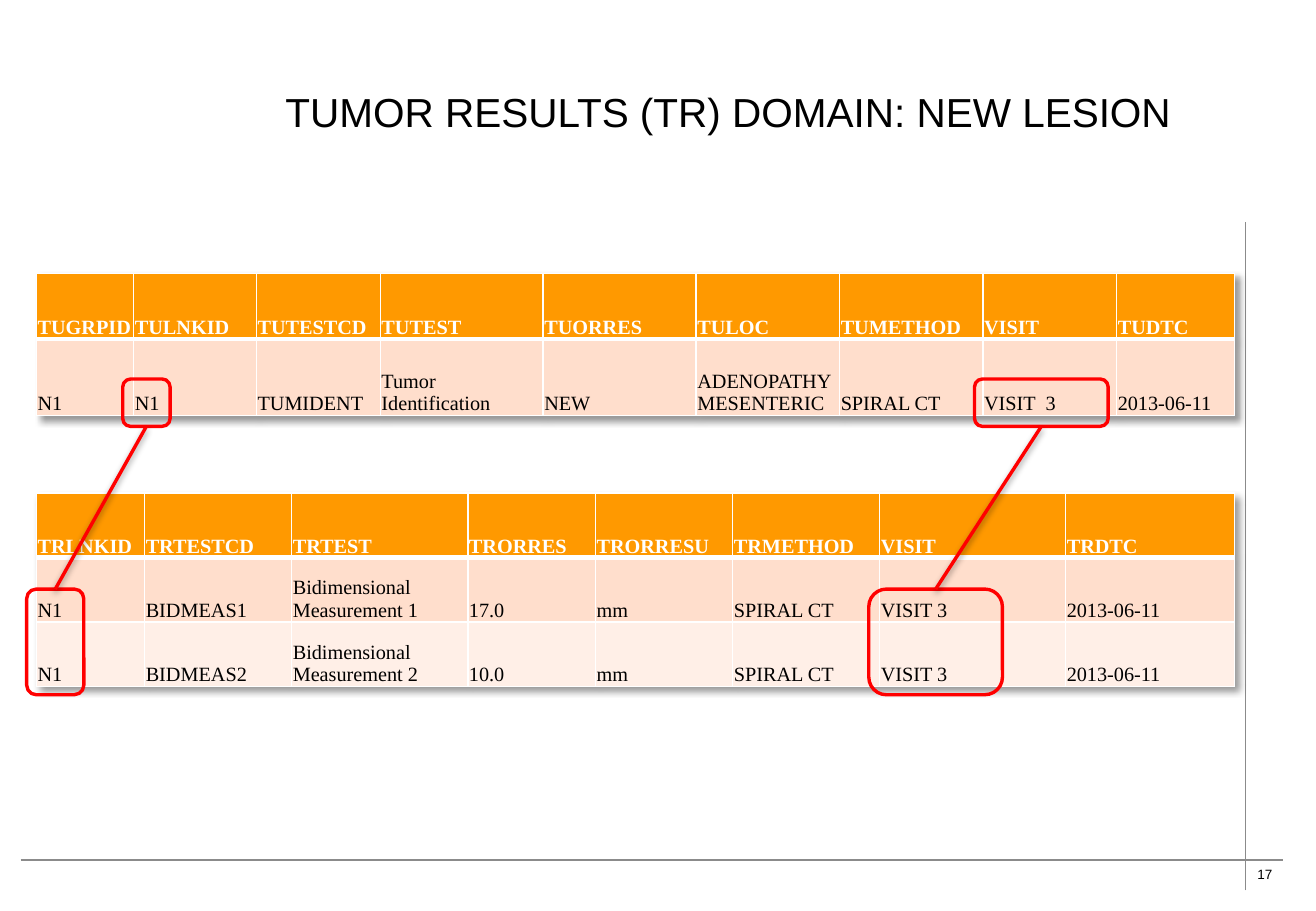
from lxml import etree
from pptx import Presentation
from pptx.dml.color import RGBColor
from pptx.enum.shapes import MSO_CONNECTOR, MSO_SHAPE
from pptx.enum.text import MSO_ANCHOR
from pptx.oxml.ns import qn
from pptx.util import Inches, Pt

STRAIGHT = MSO_CONNECTOR.STRAIGHT
ROUNDED = MSO_SHAPE.ROUNDED_RECTANGLE
MIDDLE, BOTTOM = MSO_ANCHOR.MIDDLE, MSO_ANCHOR.BOTTOM
BOTTOM_SIDE, TOP_SIDE = 2, 0

BLACK, WHITE, RED, GREY = "000000", "FFFFFF", "FF0000", "8B8B8B"
ROW_FILLS = ["FF9900", "FFDECC", "FFEFE7"]

TITLE = "TUMOR RESULTS (TR) DOMAIN: NEW LESION"
PAGE_NUMBER = "17"

RESULTS = {
    "at": (0.3, 4.06),
    "columns": [0.89, 1.21, 1.45, 1.05, 1.13, 1.21, 1.53, 1.39],
    "heights": [0.53, 0.53, 0.53],
    "rows": [
        ["TRLNKID", "TRTESTCD", "TRTEST", "TRORRES", "TRORRESU", "TRMETHOD",
         "VISIT", "TRDTC"],
        ["N1", "BIDMEAS1", "Bidimensional Measurement 1", "17.0", "mm",
         "SPIRAL CT", "VISIT 3", "2013-06-11"],
        ["N1", "BIDMEAS2", "Bidimensional Measurement 2", "10.0", "mm",
         "SPIRAL CT", "VISIT 3", "2013-06-11"],
    ],
}
IDENTIFICATION = {
    "at": (0.3, 2.25),
    "columns": [0.8, 1.01, 1.02, 1.34, 1.26, 1.18, 1.18, 1.1, 0.97],
    "heights": [0.54, 0.63],
    "rows": [
        ["TUGRPID", "TULNKID", "TUTESTCD", "TUTEST", "TUORRES", "TULOC",
         "TUMETHOD", "VISIT", "TUDTC"],
        ["N1", "N1", "TUMIDENT", "Tumor Identification", "NEW",
         "ADENOPATHY \vMESENTERIC", "SPIRAL CT", "VISIT  3", "2013-06-11"],
    ],
}
# Marked cells in the upper table, each linked to those in the lower one
LINKS = [
    ((1.01, 3.12, 0.39, 0.39), (0.22, 4.85, 0.47, 0.87)),
    ((8.02, 3.12, 1.1, 0.39), (7.15, 4.85, 1.1, 0.87)),
]
GUIDES = [(0.17, 7.08, 10.56, 7.08), (10.25, 7.33, 10.25, 1.83)]


def color(hex_code):
    return RGBColor.from_string(hex_code)


def style_font(paragraph, name, size, hex_code, bold=False):
    for run in paragraph.runs:
        run.font.name = name
        run.font.size = Pt(size)
        run.font.bold = bold
        run.font.color.rgb = color(hex_code)


def add_effects(properties, shadow=None):
    """Add an effect list, empty or with a (blur, distance, degrees) shadow."""
    effects = etree.SubElement(properties, qn("a:effectLst"))
    if shadow:
        blur, distance, degrees = shadow
        outer = etree.SubElement(
            effects, qn("a:outerShdw"), blurRad=str(Pt(blur)),
            dist=str(Pt(distance)), dir=str(degrees * 60000), rotWithShape="0")
        tint = etree.SubElement(outer, qn("a:srgbClr"), val=BLACK)
        etree.SubElement(tint, qn("a:alpha"), val="40000")


def set_borders(cell, bottom_width):
    widths = {"a:lnL": 1, "a:lnR": 1, "a:lnT": 1, "a:lnB": bottom_width}
    properties = cell._tc.get_or_add_tcPr()
    for position, (tag, width) in enumerate(widths.items()):
        border = etree.Element(qn(tag), w=str(Pt(width)))
        fill = etree.SubElement(border, qn("a:solidFill"))
        etree.SubElement(fill, qn("a:srgbClr"), val=WHITE)
        properties.insert(position, border)


def add_text(slide, text, box, size, wrap):
    frame = slide.shapes.add_textbox(*map(Inches, box)).text_frame
    frame.word_wrap = wrap
    frame.vertical_anchor = MIDDLE if wrap else None
    frame.text = text
    style_font(frame.paragraphs[0], "Arial", size, BLACK)


def add_line(slide, ends, hex_code, width, shadow=None):
    line = slide.shapes.add_connector(STRAIGHT, *map(Inches, ends))
    line.line.color.rgb = color(hex_code)
    line.line.width = Pt(width)
    add_effects(line._element.spPr, shadow)
    return line


def add_domain_table(slide, domain):
    rows, columns, heights = domain["rows"], domain["columns"], domain["heights"]
    size = (sum(columns), sum(heights))
    table = slide.shapes.add_table(
        len(rows), len(columns), *map(Inches, domain["at"] + size)).table
    add_effects(table._tbl.tblPr, (4, 3, 45))
    # The effect list has to precede the table style id
    table._tbl.tblPr.insert(0, table._tbl.tblPr[-1])
    for column, width in zip(table.columns, columns):
        column.width = Inches(width)
    for r, values in enumerate(rows):
        table.rows[r].height = Inches(heights[r])
        header = r == 0
        for c, value in enumerate(values):
            cell = table.cell(r, c)
            cell.text = value
            cell.vertical_anchor = BOTTOM
            cell.margin_left = cell.margin_right = cell.margin_top = Inches(0.01)
            cell.margin_bottom = 0
            cell.fill.solid()
            cell.fill.fore_color.rgb = color(ROW_FILLS[r])
            set_borders(cell, 3 if header else 1)
            style_font(cell.text_frame.paragraphs[0], "Times New Roman", 12,
                       WHITE if header else BLACK, header)


def add_marker(slide, box):
    marker = slide.shapes.add_shape(ROUNDED, *map(Inches, box))
    marker.shadow.inherit = False
    marker.fill.background()
    marker.line.color.rgb = color(RED)
    marker.line.width = Pt(2)
    return marker


def main():
    deck = Presentation()
    deck.slide_width, deck.slide_height = Inches(10.83), Inches(7.5)
    slide = deck.slides.add_slide(deck.slide_layouts[6])

    add_text(slide, PAGE_NUMBER, (10.25, 7.08, 0.34, 0.23), 8, False)
    for ends in GUIDES:
        add_line(slide, ends, GREY, 1)
    add_text(slide, TITLE, (2.25, 0.42, 7.83, 1), 24, True)
    for domain in (RESULTS, IDENTIFICATION):
        add_domain_table(slide, domain)

    for upper_box, lower_box in LINKS:
        upper, lower = add_marker(slide, upper_box), add_marker(slide, lower_box)
        link = add_line(slide, (0, 0, 0, 0), RED, 2, (4, 2, 90))
        link.begin_connect(upper, BOTTOM_SIDE)
        link.end_connect(lower, TOP_SIDE)

    deck.save("out.pptx")


if __name__ == "__main__":
    main()
